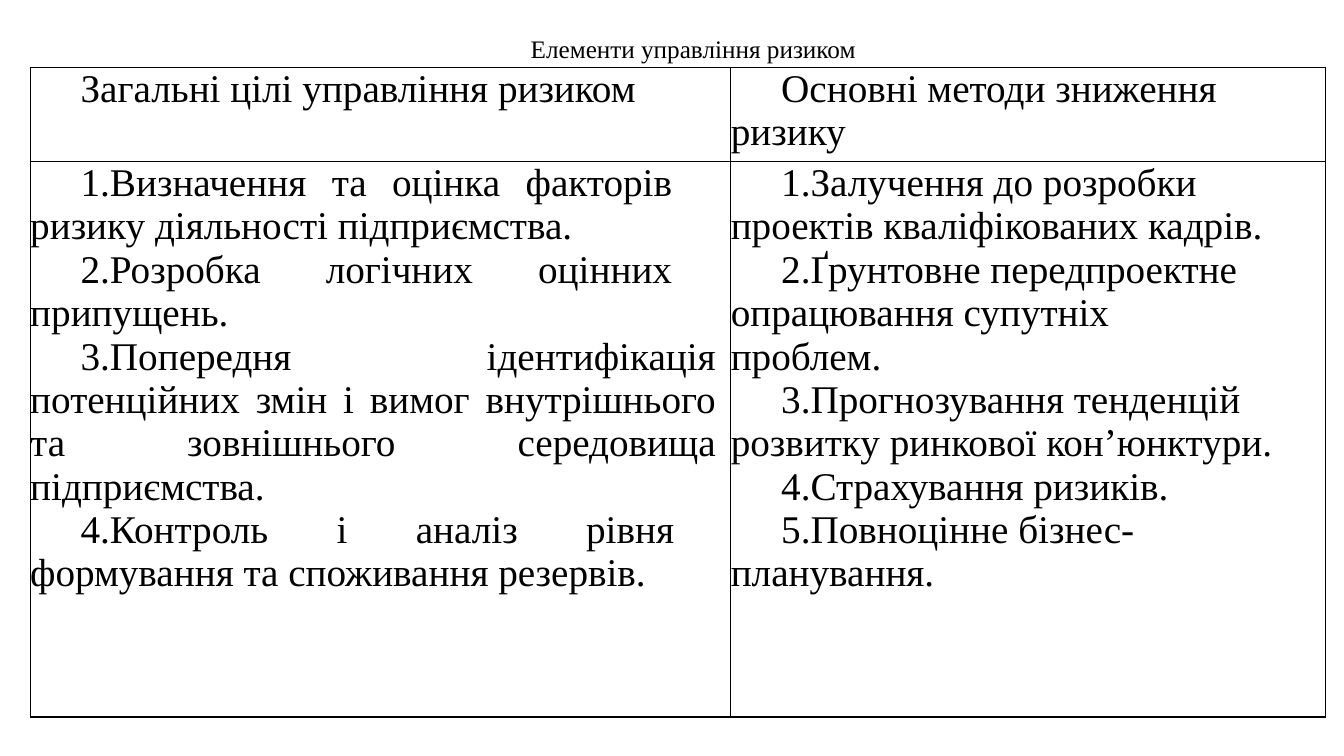
"""Build a slide with a two-column table of risk management elements."""
from lxml import etree
from pptx import Presentation
from pptx import util as u
from pptx.dml.color import RGBColor
from pptx.enum import text
from pptx.oxml import ns

BLACK = RGBColor(0, 0, 0)

HEADERS = ["Загальні цілі управління ризиком", "Основні методи зниження ризику"]
GOALS = [
    ("Визначення та оцінка факторів ризику діяльності підприємства.", 42),
    ("Розробка логічних оцінних припущень.", 42),
    ("Попередня ідентифікація потенційних змін і вимог внутрішнього "
     "та зовнішнього середовища підприємства.", 10.8),
    ("Контроль і аналіз рівня формування та споживання резервів.", 40.5),
]
METHODS = [
    ("Залучення до розробки проектів кваліфікованих кадрів.", 0),
    ("Ґрунтовне передпроектне опрацювання супутніх проблем.", 50),
    ("Прогнозування тенденцій розвитку ринкової кон’юнктури.", 0),
    ("Страхування ризиків.", 0),
    ("Повноцінне бізнес-планування.", 0),
]


class SlideBuilder:
    """Hold the text style and the current slide."""

    font_name = "Times New Roman"
    indent = u.Pt(36)
    tab = u.Pt(26.64)

    def __init__(self, presentation):
        """Add a title-only slide."""
        self.slide = presentation.slides.add_slide(presentation.slide_layouts[5])

    def run(self, paragraph, wording, size):
        """Add one styled run."""
        run = paragraph.add_run()
        run.text = wording
        run.font.name = self.font_name
        run.font.size = u.Pt(size)
        run.font.color.rgb = BLACK

    def title(self, wording, left, top, width, height):
        """Place the title in its placeholder."""
        shape = self.slide.shapes.title
        shape.left, shape.top = u.Pt(left), u.Pt(top)
        shape.width, shape.height = u.Pt(width), u.Pt(height)
        frame = shape.text_frame
        frame.word_wrap = True
        frame.auto_size = text.MSO_AUTO_SIZE.SHAPE_TO_FIT_TEXT
        frame.vertical_anchor = text.MSO_ANCHOR.TOP
        paragraph = frame.paragraphs[0]
        paragraph.alignment = text.PP_ALIGN.CENTER
        paragraph.line_spacing = 1.07
        paragraph.space_after = u.Pt(8)
        paragraph._p.get_or_add_pPr().set("marL", str(u.Pt(5)))
        self.run(paragraph, wording, 18)

    def table(self, left, top, widths, heights):
        """Add a plain table with bordered cells."""
        frame = self.slide.shapes.add_table(
            len(heights), len(widths), u.Pt(left), u.Pt(top),
            u.Pt(sum(widths)), u.Pt(sum(heights)))
        table = frame.table
        table.first_row = table.horz_banding = False
        for column, width in zip(table.columns, widths):
            column.width = u.Pt(width)
        for row, height in zip(table.rows, heights):
            row.height = u.Pt(height)
        for cell in table.iter_cells():
            cell.margin_left = cell.margin_right = 0
            cell.margin_top = cell.margin_bottom = 0
            cell.fill.background()
            self.borders(cell)
        return table

    def borders(self, cell):
        """Draw a thin black line on each side of a cell."""
        properties = cell._tc.get_or_add_tcPr()
        for index, side in enumerate(("a:lnL", "a:lnR", "a:lnT", "a:lnB")):
            line = etree.Element(ns.qn(side), w=str(u.Pt(1)))
            fill = etree.SubElement(line, ns.qn("a:solidFill"))
            etree.SubElement(fill, ns.qn("a:srgbClr"), val=str(BLACK))
            properties.insert(index, line)

    def cell_text(self, cell, items, alignment=None, numbered=False):
        """Write indented paragraphs, given as wording and right margin."""
        frame = cell.text_frame
        for index, (wording, right_margin) in enumerate(items):
            paragraph = frame.add_paragraph() if index else frame.paragraphs[0]
            paragraph.alignment = alignment
            properties = paragraph._p.get_or_add_pPr()
            properties.set("marL", "0")
            properties.set("marR", str(u.Pt(right_margin)))
            properties.set("indent", str(self.indent))
            if numbered:
                etree.SubElement(properties, ns.qn("a:buFont"), typeface=self.font_name)
                etree.SubElement(properties, ns.qn("a:buAutoNum"), type="arabicPeriod")
                tabs = etree.SubElement(properties, ns.qn("a:tabLst"))
                etree.SubElement(tabs, ns.qn("a:tab"), pos=str(self.tab), algn="l")
            self.run(paragraph, wording, 28)


def main():
    """Build and save the presentation."""
    presentation = Presentation()
    presentation.slide_width, presentation.slide_height = u.Pt(960), u.Pt(540)
    builder = SlideBuilder(presentation)
    builder.title("Елементи управління ризиком", 252.7, 18.7, 480, 29.5)
    table = builder.table(21.6, 48.2, [500.4, 424.8], [67, 396.7])
    for column, header in enumerate(HEADERS):
        builder.cell_text(table.cell(0, column), [(header, 0)])
    builder.cell_text(table.cell(1, 0), GOALS, text.PP_ALIGN.JUSTIFY, numbered=True)
    builder.cell_text(table.cell(1, 1), METHODS, numbered=True)
    presentation.save("out.pptx")


if __name__ == "__main__":
    main()
